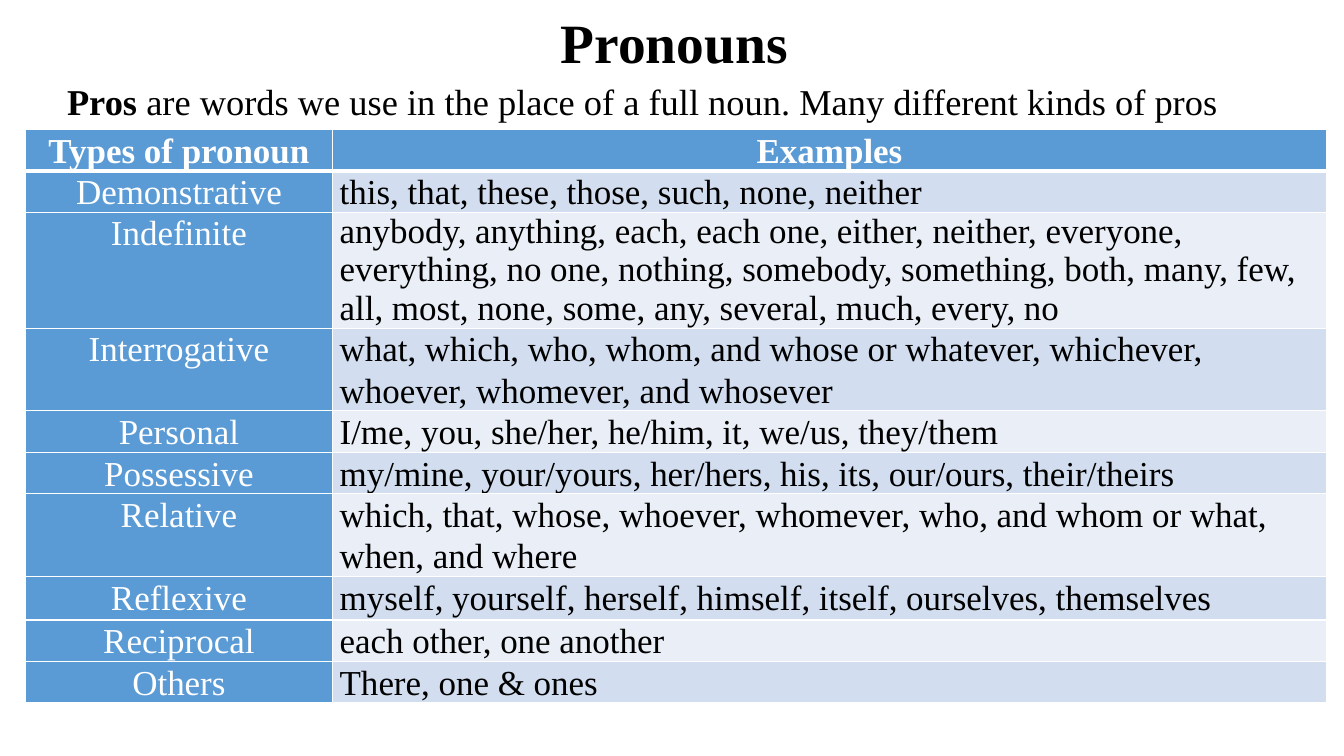
from dataclasses import dataclass

from lxml.etree import SubElement
from pptx import Presentation
from pptx.dml.color import RGBColor
from pptx.enum.text import MSO_ANCHOR as Anchor, MSO_AUTO_SIZE as AutoSize, PP_ALIGN as Align
from pptx.oxml.ns import qn
from pptx.util import Emu, Inches, Pt

GRID_COLS = 16
SLIDE_W, SLIDE_H = Inches(13.33), Inches(7.5)


@dataclass(frozen=True)
class Theme:
    font: str = "Times New Roman"
    black: str = "000000"
    white: str = "FFFFFF"
    blue: str = "5B9BD5"
    bands: tuple[str, str] = ("D2DEEF", "EAEFF7")
    title_size: float = 39.6
    intro_size: float = 26
    table_size: float = 25


@dataclass(frozen=True)
class Box:
    left: float
    top: float
    width: float
    height: float


@dataclass(frozen=True)
class PronounRow:
    kind: str
    examples: str
    height: float = 0.41
    spacing: float = 1.07


THEME = Theme()
TITLE_BOX = Box(1.21, 0.1, 13.8, 0.88)
INTRO_BOX = Box(0.68, 0.79, 15.1, 0.82)
TABLE_BOX = Box(0.3, 1.54, 15.48, 7.38)
COLUMNS = (3.66, 11.83)
ROWS = (
    PronounRow("Types of pronoun", "Examples"),
    PronounRow("Demonstrative", "this, that, these, those, such, none, neither"),
    PronounRow("Indefinite", "anybody, anything, each, each one, either, neither, everyone, "
               "everything, no one, nothing, somebody, something, both, many, few, "
               "all, most, none, some, any, several, much, every, no", 0.7, 1.0),
    PronounRow("Interrogative", "what, which, who, whom, and whose or whatever, whichever, "
               "whoever, whomever, and whosever", 0.54),
    PronounRow("Personal", "I/me, you, she/her, he/him, it, we/us, they/them"),
    PronounRow("Possessive", "my/mine, your/yours, her/hers, his, its, our/ours, their/theirs", 0.48),
    PronounRow("Relative", "which, that, whose, whoever, whomever, who, and whom or what, "
               "when, and where", 0.46),
    PronounRow("Reflexive", "myself, yourself, herself, himself, itself, ourselves, themselves", 0.52),
    PronounRow("Reciprocal", "each other, one another"),
    PronounRow("Others", "There, one & ones"),
)


def grid(units: float) -> Emu:
    """Turn square grid units into a length."""
    return Emu(round(SLIDE_W * units / GRID_COLS))


def place(shape, box: Box) -> None:
    shape.left, shape.top = grid(box.left), grid(box.top)
    shape.width, shape.height = grid(box.width), grid(box.height)


def style_run(r, size: float, color: str, bold: bool = False) -> None:
    r.font.name, r.font.size, r.font.bold = THEME.font, Pt(size), bold
    r.font.color.rgb = RGBColor.from_string(color)


def add_title(s, text: str) -> None:
    title = s.shapes.title
    place(title, TITLE_BOX)
    tf = title.text_frame
    tf.text = text
    tf.auto_size, tf.vertical_anchor = AutoSize.NONE, Anchor.MIDDLE
    p = tf.paragraphs[0]
    p.alignment, p.line_spacing = Align.CENTER, 0.9
    style_run(p.runs[0], THEME.title_size, THEME.black, True)


def add_intro(s, term: str, meaning: str) -> None:
    sp = s.shapes.add_textbox(0, 0, 0, 0)
    place(sp, INTRO_BOX)
    tf = sp.text_frame
    tf.word_wrap, tf.vertical_anchor = True, Anchor.MIDDLE
    for text, bold in ((term, True), (meaning, False)):
        r = tf.paragraphs[0].add_run()
        r.text = text
        style_run(r, THEME.intro_size, THEME.black, bold)


def set_borders(cell, bottom: float) -> None:
    """Draw white cell edges; they must come before the fill."""
    props = cell._tc.get_or_add_tcPr()
    for side, width in (("L", 1), ("R", 1), ("T", 1), ("B", bottom)):
        line = SubElement(props, qn(f"a:ln{side}"), w=str(Pt(width)))
        fill = SubElement(line, qn("a:solidFill"))
        SubElement(fill, qn("a:srgbClr"), val=THEME.white)


def fill_cell(cell, text: str, row: int, col: int, spacing: float) -> None:
    header = row == 0
    on_blue = header or col == 0
    set_borders(cell, 3 if header else 1)
    cell.fill.solid()
    color = THEME.blue if on_blue else THEME.bands[(row - 1) % 2]
    cell.fill.fore_color.rgb = RGBColor.from_string(color)
    cell.margin_left = cell.margin_right = Inches(0.07)
    cell.margin_top = cell.margin_bottom = 0
    cell.text_frame.text = text
    p = cell.text_frame.paragraphs[0]
    p.alignment = Align.CENTER if on_blue else Align.LEFT
    p.line_spacing = spacing
    p.space_before = p.space_after = Pt(3)
    style_run(p.runs[0], THEME.table_size, THEME.white if on_blue else THEME.black, header)


def add_pronoun_table(s) -> None:
    frame = s.shapes.add_table(len(ROWS), len(COLUMNS), 0, 0, SLIDE_W, SLIDE_H)
    table = frame.table
    for column, width in zip(table.columns, COLUMNS):
        column.width = grid(width)
    for i, row in enumerate(ROWS):
        table.rows[i].height = grid(row.height)
        for j, text in enumerate((row.kind, row.examples)):
            spacing = row.spacing if j else 1.07
            fill_cell(table.cell(i, j), text, i, j, spacing)
    place(frame, TABLE_BOX)


def main() -> None:
    prs = Presentation()
    prs.slide_width, prs.slide_height = SLIDE_W, SLIDE_H
    s = prs.slides.add_slide(prs.slide_layouts.get_by_name("Title Only"))
    add_title(s, "Pronouns ")
    add_pronoun_table(s)
    add_intro(s, "Pros ", "are words we use in the place of a full noun. "
              "Many different kinds of pros")
    prs.save("out.pptx")


if __name__ == "__main__":
    main()
